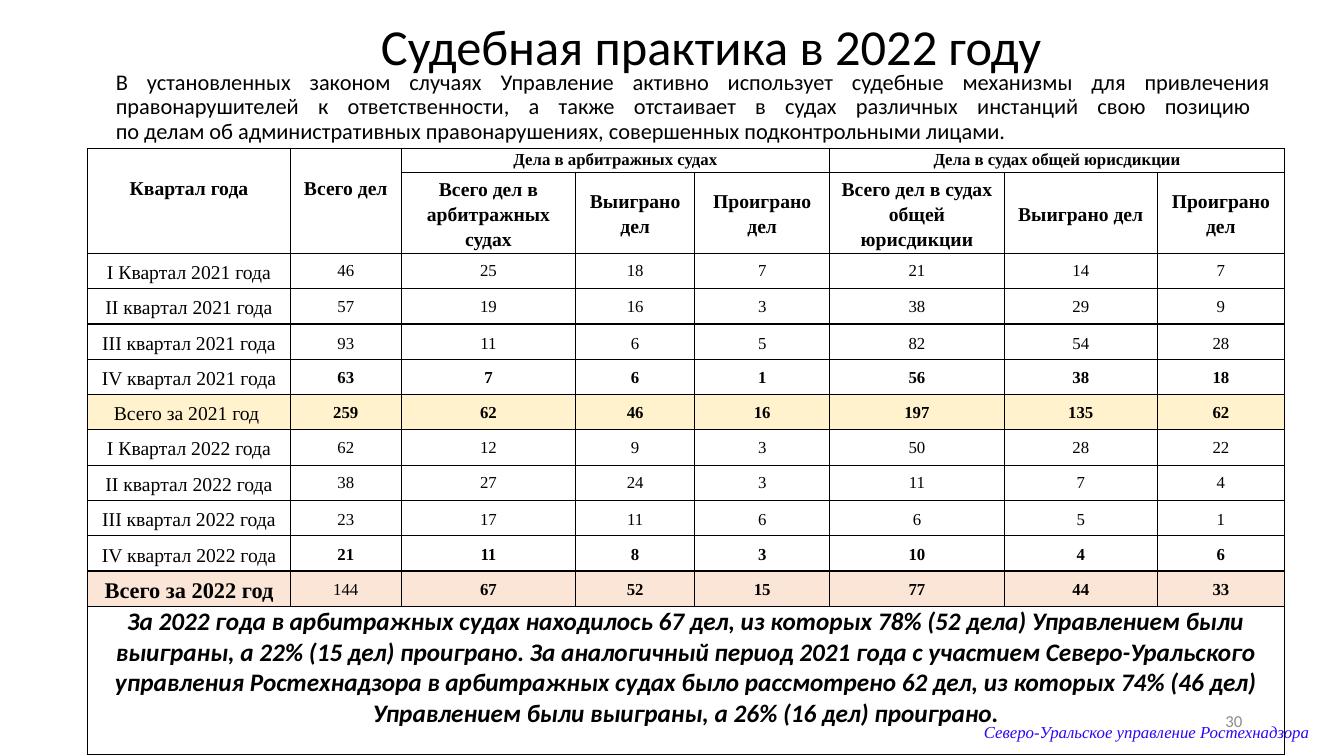
from dataclasses import dataclass

from pptx import Presentation
from pptx.dml.color import RGBColor
from pptx.enum.text import MSO_ANCHOR as Anchor, PP_ALIGN as Align
from pptx.oxml import parse_xml
from pptx.oxml.ns import nsdecls
from pptx.util import Inches, Pt

SANS, SERIF = "Calibri", "Times New Roman"
COL_WIDTHS = [2.01, 1.1, 1.73, 1.18, 1.34, 1.73, 1.52, 1.26]
ROW_HEIGHTS = [0.24, 0.78] + [0.35] * 10 + [1.47]

TITLE = "Судебная практика в 2022 году"
INTRO = (
    "В установленных законом случаях Управление активно использует судебные механизмы "
    "для привлечения правонарушителей к ответственности, а также отстаивает в судах "
    "различных инстанций свою позицию \nпо делам об административных правонарушениях, "
    "совершенных подконтрольными лицами."
)
SUMMARY = (
    "За 2022 года в арбитражных судах находилось 67 дел, из которых 78% (52 дела) "
    "Управлением были выиграны, а 22% (15 дел) проиграно. За аналогичный период 2021 года "
    "с участием Северо-Уральского управления Ростехнадзора в арбитражных судах было "
    "рассмотрено 62 дел, из которых 74% (46 дел) Управлением были выиграны, "
    "а 26% (16 дел) проиграно."
)
SUBHEADS = [
    "Всего дел в арбитражных судах", "Выиграно дел", "Проиграно дел",
    "Всего дел в судах общей юрисдикции", "Выиграно дел", "Проиграно дел",
]


@dataclass
class HeaderCell:
    text: str
    row: int
    col: int
    last_row: int
    last_col: int
    size: int = 14
    top: float = 0


@dataclass
class Period:
    label: str
    values: list[int]
    spacing: float = 1.0
    bold: bool = False
    fill: str | None = None
    label_size: int = 14
    label_bold: bool = False
    total_bold: bool | None = None


HEADERS = [
    HeaderCell("Квартал года", 0, 0, 1, 0, top=0.26),
    HeaderCell("Всего дел", 0, 1, 1, 1, top=0.26),
    HeaderCell("Дела в арбитражных судах", 0, 2, 0, 4, size=12),
    HeaderCell("Дела в судах общей юрисдикции", 0, 5, 0, 7, size=12),
]
PERIODS = [
    Period("I Квартал 2021 года", [46, 25, 18, 7, 21, 14, 7]),
    Period("II квартал 2021 года", [57, 19, 16, 3, 38, 29, 9]),
    Period("III квартал 2021 года", [93, 11, 6, 5, 82, 54, 28], 1.15),
    Period("IV квартал 2021 года", [63, 7, 6, 1, 56, 38, 18], 1.06, True),
    Period("Всего за 2021 год ", [259, 62, 46, 16, 197, 135, 62], 1.06, True, "FFF2CC"),
    Period("I Квартал 2022 года", [62, 12, 9, 3, 50, 28, 22]),
    Period("II квартал 2022 года", [38, 27, 24, 3, 11, 7, 4]),
    Period("III квартал 2022 года", [23, 17, 11, 6, 6, 5, 1], 1.15),
    Period("IV квартал 2022 года", [21, 11, 8, 3, 10, 4, 6], 1.06, True),
    Period("Всего за 2022 год", [144, 67, 52, 15, 77, 44, 33], 1.06, True, "FBE5D6",
           label_size=16, label_bold=True, total_bold=False),
]


def rgb(color: str) -> RGBColor:
    return RGBColor.from_string(color)


def write(tf, text: str, *, size: float, font: str = SERIF, color: str = "000000",
          bold: bool = False, italic: bool = False, align=Align.CENTER,
          spacing: float = 1.0) -> None:
    p = tf.paragraphs[0]
    p.text = text
    p.alignment, p.line_spacing = align, spacing
    for r in p.runs:
        f = r.font
        f.name, f.size, f.bold, f.italic = font, Pt(size), bold, italic
        f.color.rgb = rgb(color)


def add_text(slide, box: tuple[float, float, float, float], text: str,
             anchor=Anchor.MIDDLE, **style) -> None:
    tf = slide.shapes.add_textbox(*map(Inches, box)).text_frame
    tf.word_wrap = True
    tf.vertical_anchor = anchor
    write(tf, text, **style)


def write_cell(cell, text: str, *, anchor=Anchor.MIDDLE, side: float = 0.05,
               top: float = 0, **style) -> None:
    cell.margin_left = cell.margin_right = Inches(side)
    cell.margin_top, cell.margin_bottom = Inches(top), 0
    cell.vertical_anchor = anchor
    write(cell.text_frame, text, **style)


def style_cell(cell, fill: str | None) -> None:
    """Draw the four borders, then set the fill, which must follow them in the XML."""
    tc_pr = cell._tc.get_or_add_tcPr()
    for side in ("L", "R", "T", "B"):
        tc_pr.append(parse_xml(
            f'<a:ln{side} {nsdecls("a")} w="12700"><a:solidFill>'
            f'<a:srgbClr val="000000"/></a:solidFill></a:ln{side}>'))
    if fill:
        cell.fill.solid()
        cell.fill.fore_color.rgb = rgb(fill)
    else:
        cell.fill.background()


def add_cases_table(slide) -> None:
    rows, cols = len(ROW_HEIGHTS), len(COL_WIDTHS)
    table = slide.shapes.add_table(
        rows, cols, Inches(0.87), Inches(1.47),
        Inches(sum(COL_WIDTHS)), Inches(sum(ROW_HEIGHTS))).table
    table.first_row = table.horz_banding = False
    for column, width in zip(table.columns, COL_WIDTHS):
        column.width = Inches(width)
    for row, height in zip(table.rows, ROW_HEIGHTS):
        row.height = Inches(height)

    fills = [None, None] + [period.fill for period in PERIODS] + [None]
    for row, fill in zip(table.rows, fills):
        for cell in row.cells:
            style_cell(cell, fill)

    for h in HEADERS:
        cell = table.cell(h.row, h.col)
        cell.merge(table.cell(h.last_row, h.last_col))
        write_cell(cell, h.text, anchor=Anchor.TOP, top=h.top,
                   size=h.size, bold=True, spacing=1.15)
    for col, text in enumerate(SUBHEADS, start=2):
        write_cell(table.cell(1, col), text, size=14, bold=True, spacing=1.15)

    for row, period in enumerate(PERIODS, start=2):
        top = 0.01 if period.spacing > 1 else 0
        write_cell(table.cell(row, 0), period.label, top=top, size=period.label_size,
                   bold=period.label_bold, spacing=1.15)
        for col, value in enumerate(period.values, start=1):
            bold = period.bold
            if col == 1 and period.total_bold is not None:
                bold = period.total_bold
            write_cell(table.cell(row, col), str(value), side=0.07, top=top,
                       size=12, bold=bold, spacing=period.spacing)

    summary = table.cell(rows - 1, 0)
    summary.merge(table.cell(rows - 1, cols - 1))
    write_cell(summary, SUMMARY, anchor=Anchor.TOP, size=18, font=SANS,
               bold=True, italic=True)


def main() -> None:
    prs = Presentation()
    prs.slide_width, prs.slide_height = Inches(13.33), Inches(7.5)
    slide = prs.slides.add_slide(prs.slide_layouts[6])
    add_text(slide, (1.39, 0.13, 11.33, 0.72), TITLE, size=36, font=SANS, spacing=0.9)
    add_text(slide, (1.05, 0.66, 11.65, 0.94), INTRO, anchor=Anchor.TOP, size=16,
             font=SANS, align=Align.JUSTIFY, spacing=0.9)
    add_text(slide, (9.42, 6.95, 3, 0.4), "30", size=12, font=SANS, color="8C8C8C",
             align=Align.RIGHT)
    add_text(slide, (9.66, 7.01, 3.52, 0.5), "Северо-Уральское управление Ростехнадзора",
             size=12, color="3103F7", italic=True, align=Align.LEFT)
    add_cases_table(slide)
    prs.save("out.pptx")


if __name__ == "__main__":
    main()
